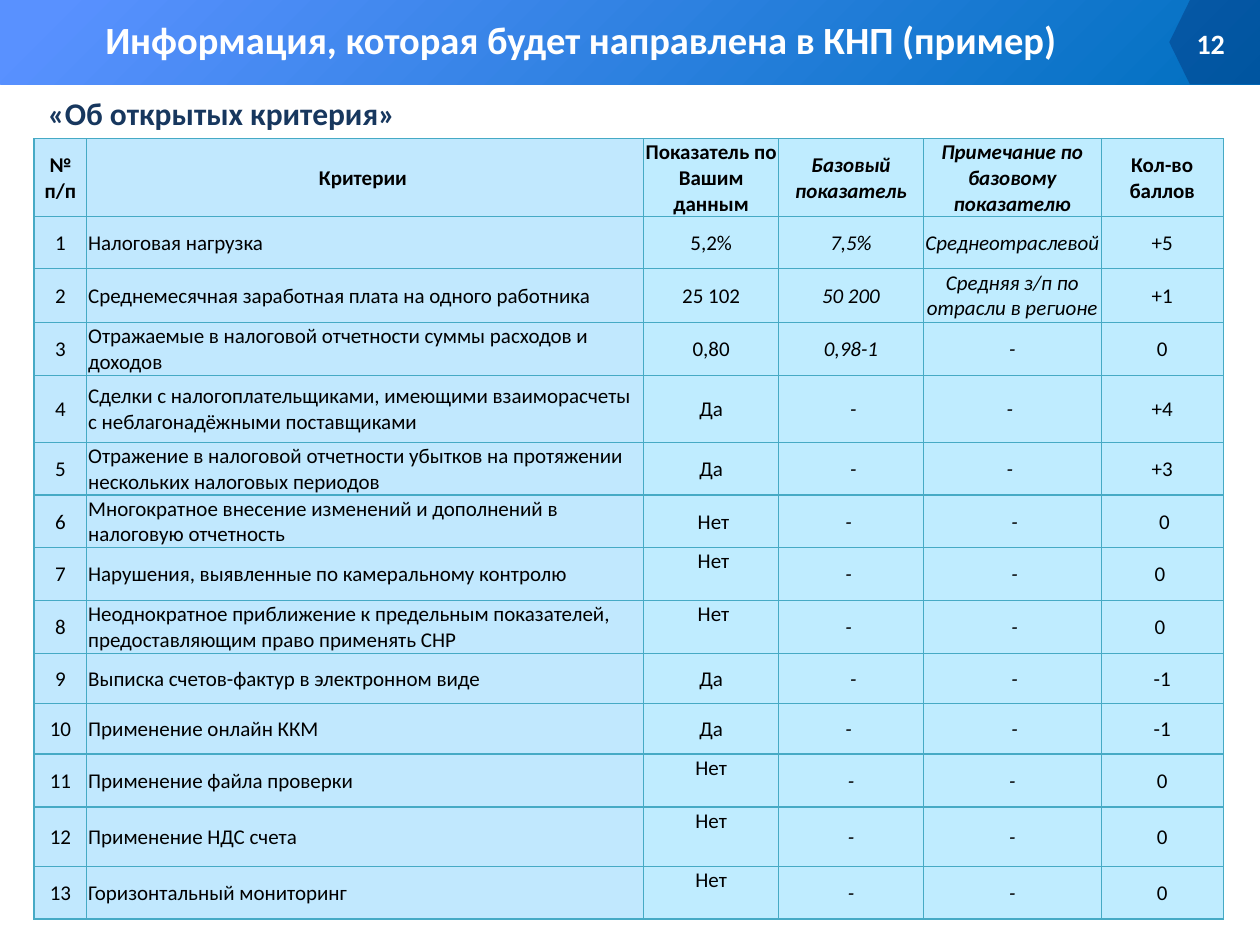
"""Build the slide that lists the open criteria and their scores."""
from dataclasses import dataclass

from lxml import etree
from pptx import Presentation
from pptx.dml.color import RGBColor
from pptx.enum.shapes import MSO_SHAPE
from pptx.enum.text import MSO_ANCHOR, MSO_AUTO_SIZE, PP_ALIGN
from pptx.oxml.ns import qn
from pptx.util import Inches, Pt

RECT, PENTAGON = MSO_SHAPE.RECTANGLE, MSO_SHAPE.PENTAGON
LEFT, CENTER, RIGHT = PP_ALIGN.LEFT, PP_ALIGN.CENTER, PP_ALIGN.RIGHT
TOP, MIDDLE = MSO_ANCHOR.TOP, MSO_ANCHOR.MIDDLE
FIT = MSO_AUTO_SIZE.SHAPE_TO_FIT_TEXT

COLS = [0.42, 4.42, 1.07, 1.15, 1.41, 0.97]
ROWS = [0.62, 0.41, 0.43, 0.42, 0.53, 0.42, 0.41, 0.42, 0.42, 0.4, 0.4, 0.42, 0.47, 0.42]
HEADER = ("№ п/п", "Критерии ", "Показатель по Вашим данным", "Базовый показатель",
          "Примечание по базовому показателю", "Кол-во баллов")
CRITERIA = [
    ("Налоговая нагрузка", "5,2%", "7,5%", "Среднеотраслевой", "+5"),
    ("Среднемесячная заработная плата на одного работника", "25 102", "50 200",
     "Средняя з/п по отрасли в регионе", "+1"),
    ("Отражаемые в налоговой отчетности суммы расходов и доходов", "0,80", "0,98-1", "-", "0"),
    ("Сделки с налогоплательщиками, имеющими взаиморасчеты с неблагонадёжными поставщиками",
     "Да", " -", "- ", "+4"),
    ("Отражение в налоговой отчетности убытков на протяжении нескольких налоговых периодов",
     "Да", " -", "- ", "+3"),
    ("Многократное внесение изменений и дополнений в налоговую отчетность",
     " Нет", "- ", " -", " 0"),
    ("Нарушения, выявленные по камеральному контролю", " Нет", "- ", " -", "0 "),
    ("Неоднократное приближение к предельным показателей, предоставляющим право применять СНР",
     " Нет", "- ", " -", "0 "),
    ("Выписка счетов-фактур в электронном виде", "Да", " -", " -", "-1"),
    ("Применение онлайн ККМ", "Да", "- ", " -", "-1"),
    ("Применение файла проверки", "Нет", "-", "-", "0"),
    ("Применение НДС счета", "Нет", "-", "-", "0"),
    ("Горизонтальный мониторинг", "Нет", "-", "-", "0"),
]
TOP_ROWS = {7, 8, 11, 12, 13}
NAME_COL, VALUE_COL, ITALIC_COLS = 1, 2, {3, 4}


@dataclass(frozen=True)
class Theme:
    """Colours, font and type sizes of the slide."""
    font: str = "Calibri"
    white: str = "FFFFFF"
    black: str = "000000"
    navy: str = "17375E"
    badge: str = "002060"
    bar_start: str = "5991FF"
    bar_end: str = "0070C0"
    label_fill: str = "C1E8FE"
    value_fill: str = "BFECFF"
    border: str = "46AAC5"
    title: int = 22
    subtitle: int = 18
    number: int = 16
    cell: int = 12


def write(tf, text, *, font, size, color, bold=False, italic=False, align=CENTER):
    """Put one formatted run into a text frame."""
    p = tf.paragraphs[0]
    p.alignment = align
    r = p.add_run()
    r.text = text
    r.font.name, r.font.size = font, Pt(size)
    r.font.bold, r.font.italic = bold, italic
    r.font.color.rgb = RGBColor.from_string(color)


class SlideBuilder:
    """Holds the theme and the current slide."""

    def __init__(self, s, theme):
        self.s, self.theme = s, theme

    def shape(self, kind, x, y, w, h):
        """Add a preset shape without line or shadow."""
        sp = self.s.shapes.add_shape(kind, Inches(x), Inches(y), Inches(w), Inches(h))
        sp.shadow.inherit = False
        sp.line.fill.background()
        return sp

    def bar(self, x, y, w, h):
        """Add the diagonal gradient bar."""
        fill = self.shape(RECT, x, y, w, h).fill
        fill.gradient()
        fill.gradient_angle = 315
        stops = ((0.04, self.theme.bar_start), (1, self.theme.bar_end))
        for stop, (position, color) in zip(fill.gradient_stops, stops):
            stop.position = position
            stop.color.rgb = RGBColor.from_string(color)

    def badge(self, x, y, w, h):
        """Add the translucent pentagon behind the page number."""
        sp = self.shape(PENTAGON, x, y, w, h)
        sp.rotation = 180
        sp.adjustments[0] = 0.245
        sp.fill.solid()
        sp.fill.fore_color.rgb = RGBColor.from_string(self.theme.badge)
        color = sp.fill._xPr.find(f".//{qn('a:srgbClr')}")
        etree.SubElement(color, qn("a:alpha"), val="33000")

    def text(self, text, x, y, w, h, *, anchor=TOP, wrap=True, grow=True, **fmt):
        """Add a text box."""
        sp = self.s.shapes.add_textbox(Inches(x), Inches(y), Inches(w), Inches(h))
        tf = sp.text_frame
        tf.word_wrap, tf.vertical_anchor = wrap, anchor
        if grow:
            tf.auto_size = FIT
        write(tf, text, font=self.theme.font, bold=True, **fmt)

    def cell(self, cell, text, fill, anchor, **fmt):
        """Fill, outline and label one table cell."""
        cell.margin_left = cell.margin_right = cell.margin_top = Inches(0.01)
        cell.margin_bottom = 0
        cell.vertical_anchor = anchor
        write(cell.text_frame, text, font=self.theme.font, size=self.theme.cell,
              color=self.theme.black, **fmt)
        tc_pr = cell._tc.get_or_add_tcPr()
        for side in ("lnL", "lnR", "lnT", "lnB"):
            ln = etree.SubElement(tc_pr, qn(f"a:{side}"), w=str(Pt(0.75)))
            solid = etree.SubElement(ln, qn("a:solidFill"))
            etree.SubElement(solid, qn("a:srgbClr"), val=self.theme.border)
        cell.fill.solid()
        cell.fill.fore_color.rgb = RGBColor.from_string(fill)

    def table(self, rows, x, y):
        """Add the criteria table."""
        table = self.s.shapes.add_table(len(rows), len(COLS), Inches(x), Inches(y),
                                        Inches(sum(COLS)), Inches(sum(ROWS))).table
        table.first_row = table.horz_banding = False
        for col, width in zip(table.columns, COLS):
            col.width = Inches(width)
        for i, (row, height) in enumerate(zip(rows, ROWS)):
            table.rows[i].height = Inches(height)
            for j, text in enumerate(row):
                self.cell(
                    table.cell(i, j), text,
                    self.theme.label_fill if j <= NAME_COL else self.theme.value_fill,
                    TOP if j == VALUE_COL and i in TOP_ROWS else MIDDLE,
                    bold=i == 0, italic=j in ITALIC_COLS,
                    align=LEFT if i and j == NAME_COL else CENTER)


def main():
    """Build and save the slide."""
    prs = Presentation()
    prs.slide_width, prs.slide_height = Inches(10), Inches(7.5)
    theme = Theme()
    b = SlideBuilder(prs.slides.add_slide(prs.slide_layouts[6]), theme)
    b.table([HEADER] + [(str(n), *row) for n, row in enumerate(CRITERIA, 1)], 0.27, 1.1)
    b.bar(0, 0, 10, 0.67)
    b.badge(9.28, 0, 0.72, 0.67)
    b.text("12", 9.28, 0.19, 0.54, 0.3, anchor=MIDDLE, grow=False,
           size=theme.number, color=theme.white, align=RIGHT)
    b.text("Информация, которая будет направлена в КНП (пример)", 0.2, 0.08, 8.82, 0.47,
           size=theme.title, color=theme.white)
    b.text("«Об открытых критерия»", 0.28, 0.7, 2.96, 0.4, wrap=False,
           size=theme.subtitle, color=theme.navy)
    prs.save("out.pptx")


if __name__ == "__main__":
    main()
